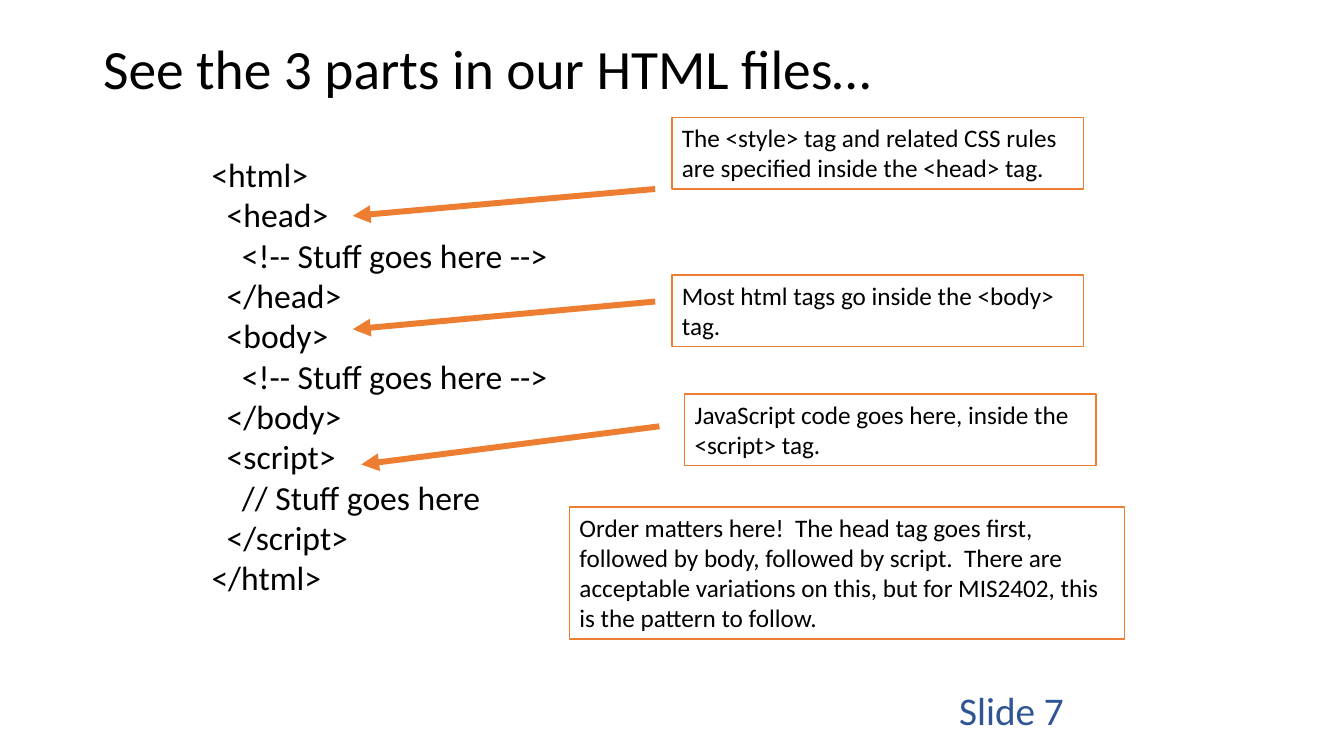
import pptx
import pptx.util
import pptx.dml.color
import pptx.enum.shapes
import pptx.enum.text
import pptx.oxml.ns
import lxml.etree

WIDE = pptx.util.Inches(13.333)
HIGH = pptx.util.Inches(7.5)
COL = WIDE / 160
ROW = HIGH / 90

BLACK = pptx.dml.color.RGBColor(0x00, 0x00, 0x00)
WHITE = pptx.dml.color.RGBColor(0xFF, 0xFF, 0xFF)
ORANGE = pptx.dml.color.RGBColor(0xED, 0x7D, 0x31)
BLUE = pptx.dml.color.RGBColor(0x2F, 0x55, 0x97)

TITLE = "See the 3 parts in our HTML files…"
CODE = [
    (0, "<html>"),
    (1, "<head>"),
    (2, "<!-- Stuff goes here -->"),
    (1, "</head>"),
    (1, "<body>"),
    (2, "<!-- Stuff goes here -->"),
    (1, "</body>"),
    (1, "<script>"),
    (2, "// Stuff goes here"),
    (1, "</script>"),
    (0, "</html>"),
]
NOTES = [
    (80, 14, 49, 8.5, "The <style> tag and related CSS rules are specified inside the <head> tag."),
    (80, 32.75, 49, 8.5, "Most html tags go inside the <body> tag."),
    (81.5, 46.9, 49, 8.5, "JavaScript code goes here, inside the <script> tag."),
    (67.8, 60.35, 66.1, 15.75,
     "Order matters here!  The head tag goes first, followed by body, followed by script.  "
     "There are acceptable variations on this, but for MIS2402, this is the pattern to follow."),
]
ARROWS = [
    (78, 22.5, 42, 25.7),
    (78, 35.9, 42, 39.2),
    (78.5, 50.75, 43, 55.3),
]


def place(*grid):
    return [round(n * unit) for n, unit in zip(grid, (COL, ROW, COL, ROW))]


def style(para, size, color):
    para.alignment = pptx.enum.text.PP_ALIGN.LEFT
    for run in para.runs:
        run.font.name = "Calibri"
        run.font.size = pptx.util.Pt(size)
        run.font.color.rgb = color


def indent(para, cols):
    para._p.get_or_add_pPr().set("marL", str(round(cols * COL)))


def add_text(slide, grid, text, size, color):
    box = slide.shapes.add_textbox(*place(*grid))
    frame = box.text_frame
    frame.word_wrap = True
    frame.text = text
    for para in frame.paragraphs:
        style(para, size, color)
    return frame


def add_title(slide):
    frame = add_text(slide, (6.7, 2.5, 103.3, 12), TITLE, 39.6, BLACK)
    frame.vertical_anchor = pptx.enum.text.MSO_ANCHOR.MIDDLE
    para = frame.paragraphs[0]
    para.line_spacing = 0.9
    indent(para, 4.4)


def add_code(slide):
    lines = "\n".join(line for level, line in CODE)
    frame = add_text(slide, (24, 17.75, 49, 54.5), lines, 24, BLACK)
    for para, (level, line) in zip(frame.paragraphs, CODE):
        indent(para, 1.81 * level)


def add_note(slide, left, top, width, height, text):
    rect = pptx.enum.shapes.MSO_SHAPE.RECTANGLE
    note = slide.shapes.add_shape(rect, *place(left, top, width, height))
    note.shadow.inherit = False
    note.fill.solid()
    note.fill.fore_color.rgb = WHITE
    note.line.color.rgb = ORANGE
    note.line.width = pptx.util.Pt(1)
    frame = note.text_frame
    frame.word_wrap = True
    frame.vertical_anchor = pptx.enum.text.MSO_ANCHOR.TOP
    frame.auto_size = pptx.enum.text.MSO_AUTO_SIZE.SHAPE_TO_FIT_TEXT
    frame.text = text
    style(frame.paragraphs[0], 18, BLACK)


def add_arrow(slide, *ends):
    kind = pptx.enum.shapes.MSO_CONNECTOR.STRAIGHT
    arrow = slide.shapes.add_connector(kind, *place(*ends))
    arrow.line.color.rgb = ORANGE
    arrow.line.width = pptx.util.Pt(4.25)
    qn = pptx.oxml.ns.qn
    props = arrow._element.spPr
    lxml.etree.SubElement(props.find(qn("a:ln")), qn("a:tailEnd"), type="triangle")
    lxml.etree.SubElement(props, qn("a:effectLst"))


def main():
    deck = pptx.Presentation()
    deck.slide_width = WIDE
    deck.slide_height = HIGH
    slide = deck.slides.add_slide(deck.slide_layouts[6])
    add_code(slide)
    for note in NOTES:
        add_note(slide, *note)
    for arrow in ARROWS:
        add_arrow(slide, *arrow)
    add_title(slide)
    add_text(slide, (113, 81.1, 36, 4.8), "Slide 7", 28, BLUE)
    deck.save("out.pptx")


if __name__ == "__main__":
    main()
